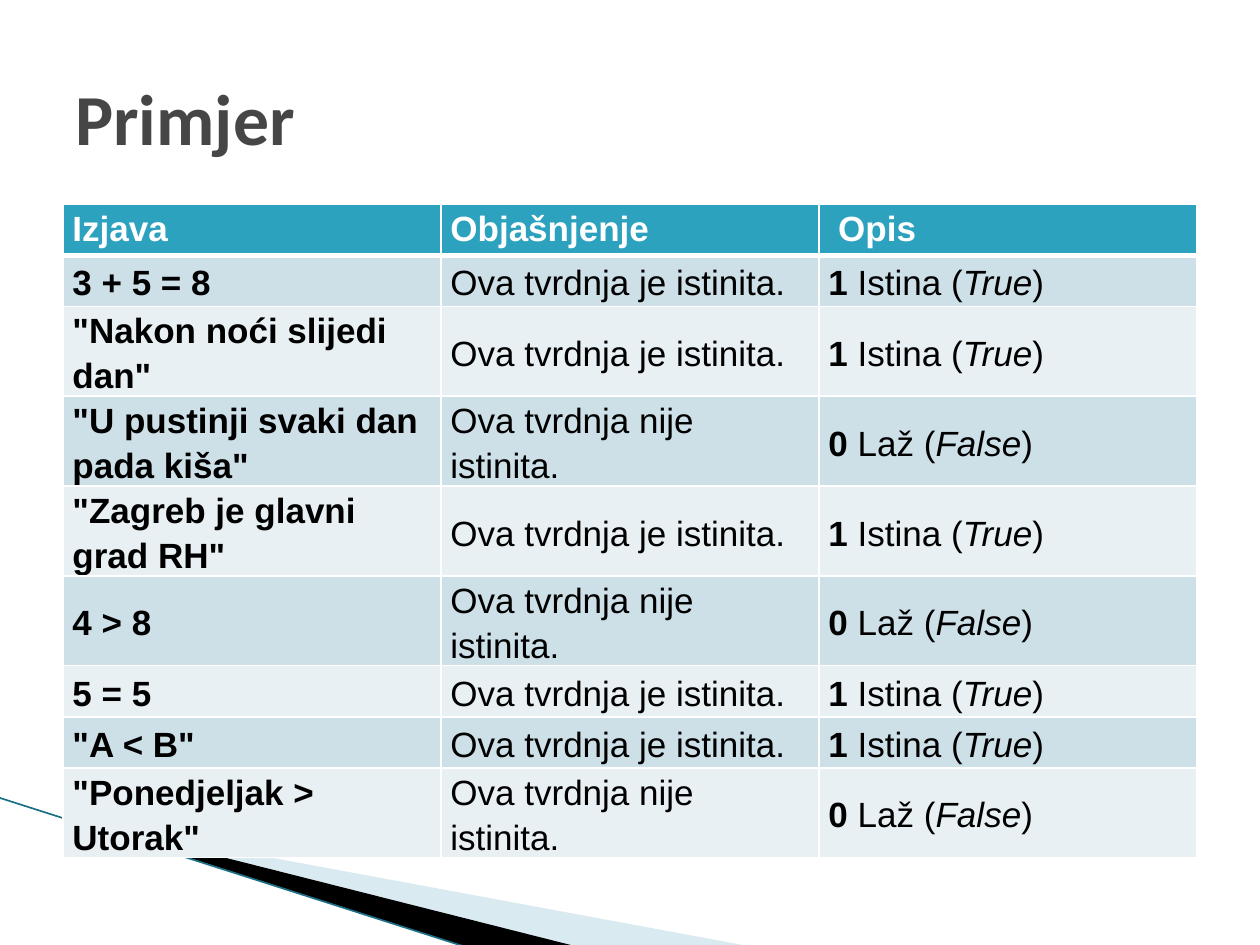
from dataclasses import dataclass

from lxml import etree
from pptx import Presentation
from pptx import util as u
from pptx.dml.color import RGBColor
from pptx.enum import shapes, text
from pptx.oxml import ns


@dataclass(frozen=True)
class Theme:
    title_font: str = "Calibri"
    table_font: str = "Arial"
    title_size: float = 41
    table_size: float = 20
    title: str = "464646"
    ink: str = "000000"
    white: str = "FFFFFF"
    header: str = "2DA2BF"
    bands: tuple = ("CDE0E8", "E8F0F4")
    swoosh: str = "A0CBDC"
    edge: str = "1B6F86"


class SlideBuilder:
    def __init__(self, slide, theme):
        self.slide = slide
        self.theme = theme

    def style(self, run, font, size, color, bold=False, italic=False):
        run.font.name = font
        run.font.size = u.Pt(size)
        run.font.color.rgb = RGBColor.from_string(color)
        run.font.bold = bold
        run.font.italic = italic

    def title(self, wording, left, top, width, height):
        heading = self.slide.shapes.add_textbox(
            u.Inches(left), u.Inches(top), u.Inches(width), u.Inches(height))
        frame = heading.text_frame
        frame.word_wrap = True
        frame.vertical_anchor = text.MSO_ANCHOR.MIDDLE
        frame.text = wording
        self.style(frame.paragraphs[0].runs[0], self.theme.title_font,
                   self.theme.title_size, self.theme.title, bold=True)

    def polygon(self, points, frame, color, opacity=100):
        start, *rest = [(u.Inches(x), u.Inches(y)) for x, y in points]
        outline = self.slide.shapes.build_freeform(*start)
        outline.add_line_segments(rest, close=True)
        wedge = outline.convert_to_shape()
        self.reframe(wedge, *map(u.Inches, frame))
        wedge.shadow.inherit = False
        wedge.line.fill.background()
        wedge.fill.solid()
        wedge.fill.fore_color.rgb = RGBColor.from_string(color)
        if opacity < 100:
            tint = wedge.fill._xPr.find(".//" + ns.qn("a:srgbClr"))
            etree.SubElement(tint, ns.qn("a:alpha"), val=str(opacity * 1000))

    def reframe(self, wedge, left, top, width, height):
        shift_x, shift_y = wedge.left - left, wedge.top - top
        geometry = wedge._element.spPr
        for point in geometry.iter(ns.qn("a:pt")):
            point.set("x", str(int(point.get("x")) + shift_x))
            point.set("y", str(int(point.get("y")) + shift_y))
        for contour in geometry.iter(ns.qn("a:path")):
            contour.set("w", str(width))
            contour.set("h", str(height))
        wedge.left, wedge.top = left, top
        wedge.width, wedge.height = width, height

    def line(self, start, end, color, width):
        edge = self.slide.shapes.add_connector(
            shapes.MSO_CONNECTOR.STRAIGHT, *map(u.Inches, start + end))
        edge.line.color.rgb = RGBColor.from_string(color)
        edge.line.width = u.Pt(width)
        etree.SubElement(edge._element.spPr, ns.qn("a:effectLst"))

    def borders(self, cell, **widths):
        properties = cell._tc.get_or_add_tcPr()
        for position, side in enumerate("LRTB"):
            border = etree.Element(ns.qn(f"a:ln{side}"),
                                   w=str(u.Pt(widths.get(side, 1))))
            fill = etree.SubElement(border, ns.qn("a:solidFill"))
            etree.SubElement(fill, ns.qn("a:srgbClr"), val=self.theme.white)
            properties.insert(position, border)

    def cell(self, cell, pieces, fill, color, anchor, align):
        cell.margin_left = cell.margin_right = u.Inches(0.15 / 2)
        cell.margin_top = cell.margin_bottom = 0
        cell.vertical_anchor = anchor
        cell.fill.solid()
        cell.fill.fore_color.rgb = RGBColor.from_string(fill)
        paragraph = cell.text_frame.paragraphs[0]
        paragraph.alignment = align
        paragraph.line_spacing = 1.15
        for wording, bold, italic in pieces:
            run = paragraph.add_run()
            run.text = wording
            self.style(run, self.theme.table_font, self.theme.table_size,
                       color, bold, italic)

    def table(self, headings, rows, left, top, width, height):
        count = len(rows) + 1
        grid = self.slide.shapes.add_table(
            count, len(headings), u.Inches(left), u.Inches(top),
            u.Inches(width), u.Inches(height)).table
        for column in grid.columns:
            column.width = u.Inches(width / len(headings))
        for row in grid.rows:
            row.height = u.Inches(height / count)
        for index, heading in enumerate(headings):
            cell = grid.cell(0, index)
            self.cell(cell, [(heading, True, False)], self.theme.header,
                      self.theme.white, text.MSO_ANCHOR.TOP,
                      text.PP_ALIGN.JUSTIFY)
            self.borders(cell, B=3)
        for number, row in enumerate(rows, 1):
            band = self.theme.bands[(number - 1) % 2]
            for index, pieces in enumerate(row):
                cell = grid.cell(number, index)
                self.cell(cell, pieces, band, self.theme.ink,
                          text.MSO_ANCHOR.MIDDLE, text.PP_ALIGN.LEFT)
                self.borders(cell, T=3 if number == 1 else 1)


def truth_row(statement, is_true):
    verb = "je" if is_true else "nije"
    digit, word, literal = (("1", "Istina", "True") if is_true
                            else ("0", "Laž", "False"))
    return (
        [(statement, True, False)],
        [(f"Ova tvrdnja {verb} istinita.", False, False)],
        [(digit, True, False), (f" {word} (", False, False),
         (literal, False, True), (")", False, False)],
    )


STATEMENTS = [
    ("3 + 5 = 8", True),
    ('"Nakon noći slijedi dan"', True),
    ('"U pustinji svaki dan pada kiša"', False),
    ('"Zagreb je glavni grad RH"', True),
    ("4 > 8", False),
    ("5 = 5", True),
    ('"A < B"', True),
    ('"Ponedjeljak > Utorak"', False),
]


def main():
    deck = Presentation()
    deck.slide_width = u.Inches(10)
    deck.slide_height = u.Inches(7.5)
    theme = Theme()
    page = SlideBuilder(deck.slides.add_slide(deck.slide_layouts[6]), theme)

    page.polygon([(0.55, 6.51), (5.95, 7.51), (4.56, 7.51), (0.55, 6.5)],
                 (0.78, 5.47, 4.16, 1.58), theme.swoosh, opacity=40)
    page.polygon([(0.53, 6.49), (4.57, 7.51), (3.72, 7.52), (0.54, 6.5)],
                 (-0.06, 6.33, 4.16, 0.92), theme.ink)
    page.line((-0.01, 6.33), (3.71, 7.52), theme.edge, 0.95)
    page.table(["Izjava", "Objašnjenje", " Opis"],
               [truth_row(*entry) for entry in STATEMENTS],
               left=0.5, top=1.62, width=9, height=3.65)
    page.title("Primjer", 0.5, 0.3, 9, 1.25)

    deck.save("out.pptx")


if __name__ == "__main__":
    main()
